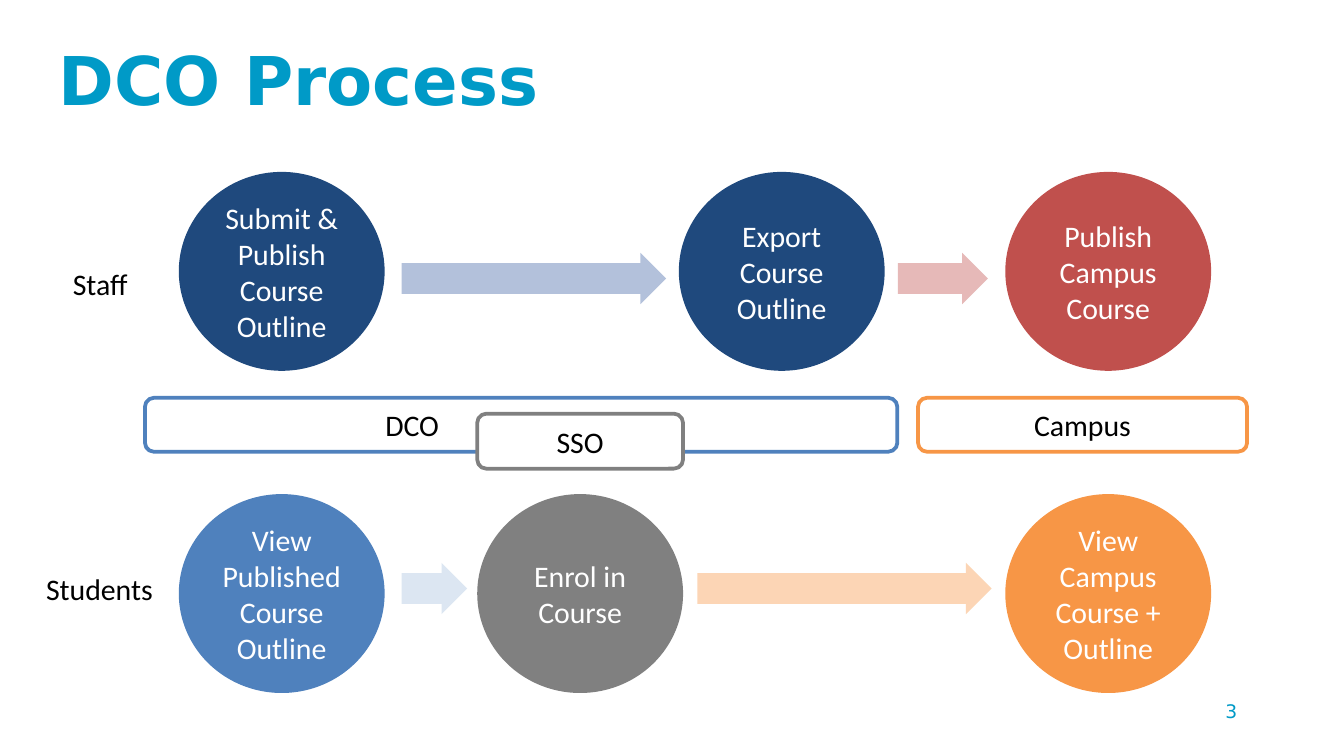
from pptx import Presentation
from pptx.dml.color import RGBColor
from pptx.enum.shapes import MSO_SHAPE
from pptx.enum.text import MSO_ANCHOR, PP_ALIGN
from pptx.util import Cm, Pt

OVAL, ARROW, ROUNDED = MSO_SHAPE.OVAL, MSO_SHAPE.RIGHT_ARROW, MSO_SHAPE.ROUNDED_RECTANGLE
MIDDLE, LEFT, CENTER = MSO_ANCHOR.MIDDLE, PP_ALIGN.LEFT, PP_ALIGN.CENTER

WHITE = RGBColor(0xFF, 0xFF, 0xFF)
BLACK = RGBColor(0x00, 0x00, 0x00)
TEAL = RGBColor(0x00, 0x9A, 0xC7)
NAVY = RGBColor(0x1F, 0x49, 0x7D)
BLUE = RGBColor(0x4F, 0x81, 0xBD)
RED = RGBColor(0xC0, 0x50, 0x4D)
ORANGE = RGBColor(0xF7, 0x96, 0x46)
GRAY = RGBColor(0x80, 0x80, 0x80)
PALE_NAVY = RGBColor(0xB3, 0xC1, 0xDB)
PALE_RED = RGBColor(0xE6, 0xB9, 0xB8)
PALE_BLUE = RGBColor(0xDC, 0xE6, 0xF2)
PALE_ORANGE = RGBColor(0xFC, 0xD5, 0xB5)

TITLE_FONT = dict(name="DejaVu Sans", size=Pt(36), bold=True)
NUMBER_FONT = dict(name="DejaVu Sans", size=Pt(10))
BODY_FONT = dict(name="Calibri", size=Pt(16))

# Left edges of the four step columns, and the size of a step circle (cm)
COL_1, COL_2, COL_3, COL_4 = 3.38, 9.02, 12.83, 19.0
STEP_W, STEP_H = 3.89, 3.76
ARROW_H = 0.97


def cm_box(box):
    return [Cm(v) for v in box]


def write(tf, text, fmt, color, align=CENTER):
    p = tf.paragraphs[0]
    p.alignment = align
    r = p.add_run()
    r.text = text
    for name, value in fmt.items():
        setattr(r.font, name, value)
    r.font.color.rgb = color


def add_block(s, kind, box, fill, text="", color=BLACK, outline=None):
    """Add a flat filled shape with optional centred text and outline."""
    sp = s.shapes.add_shape(kind, *cm_box(box))
    sp.shadow.inherit = False
    sp.fill.solid()
    sp.fill.fore_color.rgb = fill
    if outline is None:
        sp.line.fill.background()
    else:
        sp.line.color.rgb = outline
        sp.line.width = Pt(2)
    if text:
        tf = sp.text_frame
        tf.word_wrap = True
        tf.vertical_anchor = MIDDLE
        write(tf, text, BODY_FONT, color)
    return sp


def add_title(s, box, text):
    sp = s.shapes.title
    sp.left, sp.top, sp.width, sp.height = cm_box(box)
    sp.text_frame.vertical_anchor = MIDDLE
    write(sp.text_frame, text, TITLE_FONT, TEAL, LEFT)


def add_page_number(s, box, text):
    tf = s.shapes.add_textbox(*cm_box(box)).text_frame
    tf.word_wrap = True
    write(tf, text, NUMBER_FONT, TEAL, LEFT)


def add_lane(s, top, label, label_box, steps, arrow_top, arrows):
    """Add one role's row: its label, step circles and the arrows between."""
    for x, width, color in arrows:
        arrow = add_block(s, ARROW, (x, arrow_top, width, ARROW_H), color)
        arrow.adjustments[0], arrow.adjustments[1] = 0.6, 0.5
    for x, color, text in steps:
        add_block(s, OVAL, (x, top, STEP_W, STEP_H), color, text, WHITE)
    add_block(s, ROUNDED, label_box, WHITE, label)


def add_system_bar(s, top):
    """Add the systems between the lanes; the sign-on box overlaps the first."""
    dco = add_block(s, ROUNDED, (2.74, top, 14.22, 1.02), WHITE, "DCO", outline=BLUE)
    dco.text_frame.margin_right = Cm(4.37)  # keeps the name clear of SSO
    add_block(s, ROUNDED, (17.35, top, 6.22, 1.02), WHITE, "Campus", outline=ORANGE)
    add_block(s, ROUNDED, (COL_2, top + 0.3, STEP_W, 1.04), WHITE, "SSO", outline=GRAY)


def main():
    prs = Presentation()
    prs.slide_width, prs.slide_height = Cm(25.4), Cm(14.29)
    s = prs.slides.add_slide(prs.slide_layouts[5])

    add_title(s, (0.86, 0.53, 17.04, 1.93), "DCO Process")
    add_page_number(s, (22.91, 13.11, 1.78, 0.99), "3")
    add_system_bar(s, 7.52)
    add_lane(
        s, 3.25, "Staff", (0.74, 4.78, 2.31, 1.17),
        [(COL_1, NAVY, "Submit & Publish Course Outline"),
         (COL_3, NAVY, "Export Course Outline"),
         (COL_4, RED, "Publish Campus Course")],
        4.78, [(7.59, 5.0, PALE_NAVY), (16.97, 1.7, PALE_RED)])
    add_lane(
        s, 9.34, "Students", (0.43, 10.54, 2.9, 1.17),
        [(COL_1, BLUE, "View Published Course Outline"),
         (COL_2, GRAY, "Enrol in Course"),
         (COL_4, ORANGE, "View Campus Course + Outline")],
        10.64, [(7.59, 1.24, PALE_BLUE), (13.18, 5.56, PALE_ORANGE)])

    prs.save("out.pptx")


if __name__ == "__main__":
    main()
